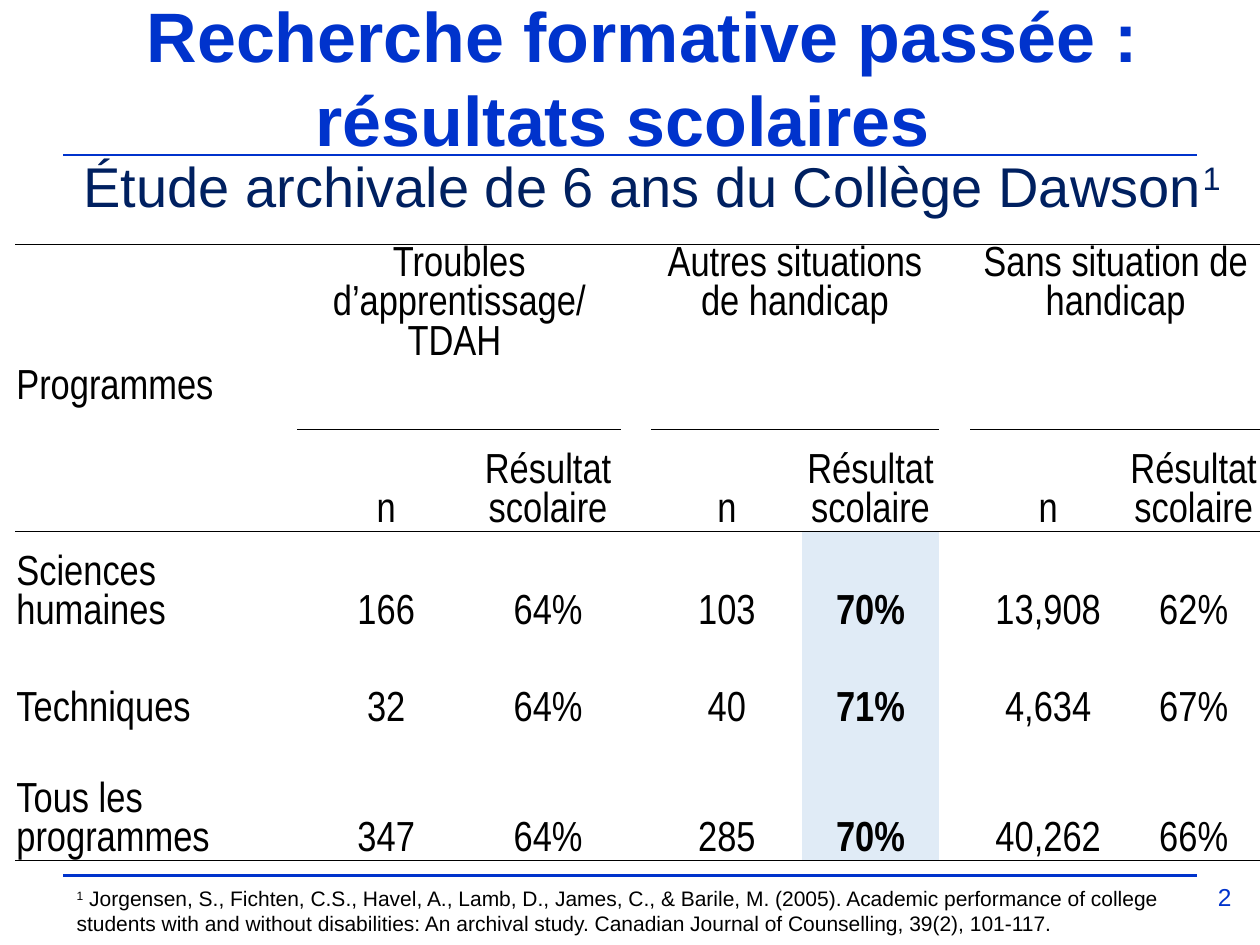
from lxml.etree import SubElement
from pptx import Presentation
from pptx.dml.color import RGBColor
from pptx.enum.shapes import MSO_CONNECTOR
from pptx.enum.text import MSO_ANCHOR, PP_ALIGN
from pptx.oxml.ns import qn
from pptx.util import Inches, Pt

COLORS = {"blue": "0033CC", "navy": "002060", "black": "000000",
          "white": "FFFFFF", "highlight": "E0EBF6"}
COLUMN_WIDTHS = [2.24, 1.41, 1.16, 0.13, 1.2, 1.08, 0.25, 1.24, 1.07]
ROW_HEIGHTS = [1.47, 0.69, 0.77, 0.77, 1.03]
GROUPS = {1: "Troubles d’apprentissage/ TDAH\u00a0",
          4: "Autres situations de handicap",
          7: "Sans situation de\nhandicap"}
RESULTS = [
    ("Sciences humaines", [("166", "64%"), ("103", "70%"), ("13,908", "62%")]),
    ("Techniques", [("32", "64%"), ("40", "71%"), ("4,634", "67%")]),
    ("Tous les programmes", [("347", "64%"), ("285", "70%"), ("40,262", "66%")]),
]
HIGHLIGHT_COLUMN = 5
CITATION = (" Jorgensen, S., Fichten, C.S., Havel, A., Lamb, D., James, C., & Barile, M. (2005). "
            "Academic performance of college students with and without disabilities: "
            "An archival study. Canadian Journal of Counselling, 39(2), 101-117.")


def rgb(name):
    """Return the named colour."""
    return RGBColor.from_string(COLORS[name])


def style(paragraph, size, color="black", face="Arial", bold=False, align=PP_ALIGN.LEFT):
    """Set the alignment and font of a paragraph."""
    paragraph.alignment = align
    font = paragraph.font
    font.name, font.size, font.bold = face, Pt(size), bold
    font.color.rgb = rgb(color)


def add_text(slide, box, pieces, anchor=MSO_ANCHOR.TOP, **font):
    """Add a one-paragraph text box whose pieces are (text, is superscript)."""
    frame = slide.shapes.add_textbox(*map(Inches, box)).text_frame
    frame.word_wrap = True
    frame.vertical_anchor = anchor
    paragraph = frame.paragraphs[0]
    for text, raised in pieces:
        run = paragraph.add_run()
        run.text = text
        if raised:
            run._r.get_or_add_rPr().set("baseline", "30000")
    style(paragraph, **font)
    return paragraph


def add_rule(slide, left, top, width):
    """Draw a horizontal blue rule."""
    rule = slide.shapes.add_connector(
        MSO_CONNECTOR.STRAIGHT, *map(Inches, (left, top, left + width, top)))
    rule.line.color.rgb = rgb("blue")
    rule.line.width = Pt(1.5)
    SubElement(rule._element.spPr, qn("a:effectLst"))


def add_heading(slide, left, top, width):
    """Place the title, its rule and the subtitle."""
    add_rule(slide, left, top + 1.02, width)
    add_text(slide, (left - 0.02, top, width + 0.08, 1.11),
             [(" Recherche formative passée : résultats scolaires ", False)],
             MSO_ANCHOR.BOTTOM, size=40, color="blue", bold=True, align=PP_ALIGN.CENTER)
    subtitle = add_text(slide, (left - 0.3, top + 0.94, width + 0.65, 0.65),
                        [("Étude archivale de 6 ans du Collège Dawson", False), ("1", True)],
                        size=32, color="navy", align=PP_ALIGN.CENTER)
    subtitle._p.get_or_add_pPr().set("marL", str(Inches(0.3)))


def set_borders(cell, ruled_sides):
    """Rule the given sides of a cell and clear the others."""
    properties = cell._tc.get_or_add_tcPr()
    for side in "LRTB":
        border = SubElement(properties, qn(f"a:ln{side}"), w=str(Pt(1)))
        if side in ruled_sides:
            fill = SubElement(border, qn("a:solidFill"))
            SubElement(fill, qn("a:srgbClr"), val=COLORS["black"])
        else:
            SubElement(border, qn("a:noFill"))


def fill_cell(cell, text, anchor, align, bold=False):
    """Write a table cell's text."""
    cell.margin_left = cell.margin_right = cell.margin_top = Inches(0.01)
    cell.margin_bottom = 0
    cell.vertical_anchor = anchor
    cell.text = text
    for paragraph in cell.text_frame.paragraphs:
        style(paragraph, 24, face="Arial Narrow", bold=bold, align=align)


def ruled_sides(row, column):
    """Return the sides of a cell that carry a rule."""
    in_group = any(column in (start, start + 1) for start in GROUPS)
    top = row == 0 or row == 2 or (row == 1 and in_group)
    bottom = row in (1, len(ROW_HEIGHTS) - 1) or (row == 0 and in_group)
    return "T" * top + "B" * bottom


def add_results_table(slide, left, top):
    """Build the table of results by programme and group."""
    table = slide.shapes.add_table(
        len(ROW_HEIGHTS), len(COLUMN_WIDTHS), Inches(left), Inches(top),
        Inches(sum(COLUMN_WIDTHS)), Inches(sum(ROW_HEIGHTS))).table
    table.first_row = table.horz_banding = False
    for column, width in zip(table.columns, COLUMN_WIDTHS):
        column.width = Inches(width)
    for row, height in zip(table.rows, ROW_HEIGHTS):
        row.height = Inches(height)

    for row in range(len(ROW_HEIGHTS)):
        for column in range(len(COLUMN_WIDTHS)):
            cell = table.cell(row, column)
            set_borders(cell, ruled_sides(row, column))
            highlighted = row > 1 and column == HIGHLIGHT_COLUMN
            cell.fill.solid()
            cell.fill.fore_color.rgb = rgb("highlight" if highlighted else "white")

    table.cell(0, 0).merge(table.cell(1, 0))
    fill_cell(table.cell(0, 0), "Programmes", MSO_ANCHOR.MIDDLE, PP_ALIGN.LEFT)
    for start, group in GROUPS.items():
        table.cell(0, start).merge(table.cell(0, start + 1))
        fill_cell(table.cell(0, start), group, MSO_ANCHOR.TOP, PP_ALIGN.CENTER)
        for offset, label in enumerate(("n", "Résultat scolaire")):
            fill_cell(table.cell(1, start + offset), label, MSO_ANCHOR.BOTTOM, PP_ALIGN.CENTER)

    for row, (programme, pairs) in enumerate(RESULTS, 2):
        fill_cell(table.cell(row, 0), programme, MSO_ANCHOR.BOTTOM, PP_ALIGN.LEFT)
        for start, pair in zip(GROUPS, pairs):
            for column, value in enumerate(pair, start):
                fill_cell(table.cell(row, column), value, MSO_ANCHOR.BOTTOM,
                          PP_ALIGN.CENTER, column == HIGHLIGHT_COLUMN)


def add_footer(slide, left, top, width):
    """Place the bottom rule, the slide number and the citation."""
    add_rule(slide, left, top, width)
    add_text(slide, (left + width - 0.06, top, 0.56, 0.42), [("2", False)],
             size=14, color="blue", align=PP_ALIGN.CENTER)
    add_text(slide, (left + 0.01, top + 0.03, width - 0.02, 0.5),
             [("1", True), (CITATION, False)], size=12)


def main():
    """Build and save the slide."""
    presentation = Presentation()
    presentation.slide_width, presentation.slide_height = Inches(10), Inches(7.5)
    slide = presentation.slides.add_slide(presentation.slide_layouts[6])
    add_heading(slide, 0.5, 0.21, 9)
    add_results_table(slide, 0.12, 1.94)
    add_footer(slide, 0.5, 6.95, 9)
    presentation.save("out.pptx")


if __name__ == "__main__":
    main()
